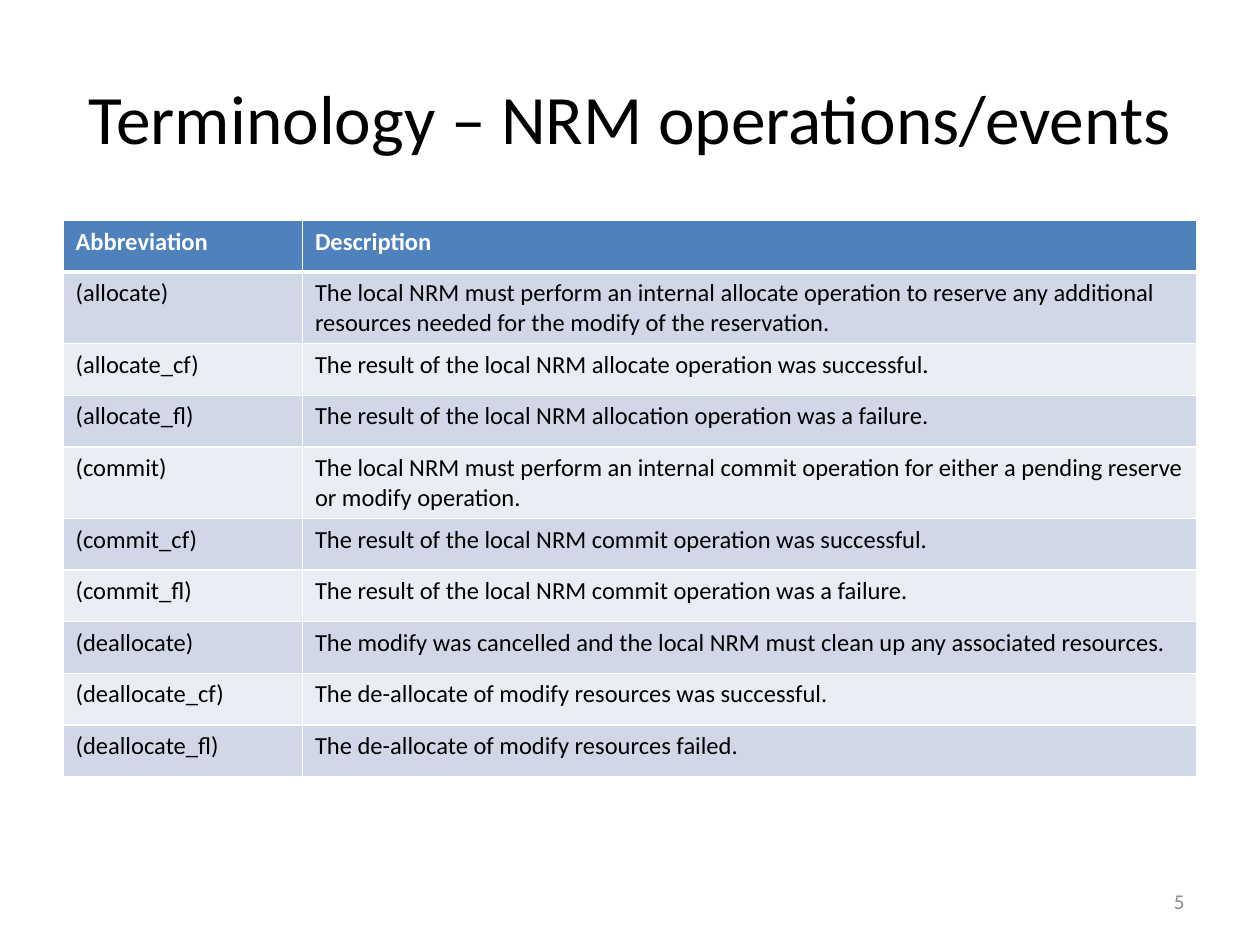
"""Build the slide that lists the NRM operations and events."""

from typing import NamedTuple

from lxml import etree
from pptx import Presentation
from pptx.dml.color import RGBColor
from pptx.enum.text import MSO_ANCHOR, PP_ALIGN
from pptx.oxml.ns import qn
from pptx.util import Inches, Pt

LEFT, CENTER, RIGHT = PP_ALIGN.LEFT, PP_ALIGN.CENTER, PP_ALIGN.RIGHT
MIDDLE = MSO_ANCHOR.MIDDLE

FONT = "Calibri"
BLACK = RGBColor(0x00, 0x00, 0x00)
WHITE = RGBColor(0xFF, 0xFF, 0xFF)
GRAY = RGBColor(0x8C, 0x8C, 0x8C)
HEADER_BLUE = RGBColor(0x4F, 0x81, 0xBD)
BANDS = (RGBColor(0xD0, 0xD8, 0xE8), RGBColor(0xE9, 0xED, 0xF4))

COLUMN_WIDTHS = (1.9, 7.1)
ROW_HEIGHT = 0.41
THIN, THICK = 1, 3


class Term(NamedTuple):
    """One row of the terminology table."""

    abbreviation: str
    description: str


HEADER = Term("Abbreviation", "Description")
TERMS = (
    Term("(allocate)", "The local NRM must perform an internal allocate operation to reserve "
         "any additional resources needed for the modify of the reservation."),
    Term("(allocate_cf)", "The result of the local NRM allocate operation was successful."),
    Term("(allocate_fl)", "The result of the local NRM allocation operation was a failure."),
    Term("(commit)", "The local NRM must perform an internal commit operation for either "
         "a pending reserve or modify operation."),
    Term("(commit_cf)", "The result of the local NRM commit operation was successful."),
    Term("(commit_fl)", "The result of the local NRM commit operation was a failure."),
    Term("(deallocate)", "The modify was cancelled and the local NRM must clean up "
         "any associated resources."),
    Term("(deallocate_cf)", "The de-allocate of modify resources was successful."),
    Term("(deallocate_fl)", "The de-allocate of modify resources failed."),
)


def write_text(frame, text: str, *, size: float, color: RGBColor = BLACK,
               bold: bool = False, align=LEFT) -> None:
    """Put one formatted paragraph into a text frame."""
    para = frame.paragraphs[0]
    para.alignment = align
    span = para.add_run()
    span.text = text
    span.font.name = FONT
    span.font.size = Pt(size)
    span.font.bold = bold
    span.font.color.rgb = color


def add_text_box(page, left: float, top: float, width: float, height: float,
                 text: str, **text_format) -> None:
    """Add a wrapped, vertically centred text box."""
    box = page.shapes.add_textbox(Inches(left), Inches(top), Inches(width), Inches(height))
    box.text_frame.word_wrap = True
    box.text_frame.vertical_anchor = MIDDLE
    write_text(box.text_frame, text, **text_format)


def add_borders(cell, top: float, bottom: float) -> None:
    """Draw white borders of the given point widths around a cell."""
    properties = cell._tc.get_or_add_tcPr()
    for side, width in (("L", THIN), ("R", THIN), ("T", top), ("B", bottom)):
        line = etree.SubElement(properties, qn(f"a:ln{side}"), w=str(Pt(width)))
        fill = etree.SubElement(line, qn("a:solidFill"))
        etree.SubElement(fill, qn("a:srgbClr"), val=str(WHITE))


def add_term_table(page, left: float, top: float) -> None:
    """Add the terminology table with a header and banded rows."""
    rows = (HEADER, *TERMS)
    table = page.shapes.add_table(
        len(rows), len(COLUMN_WIDTHS), Inches(left), Inches(top),
        Inches(sum(COLUMN_WIDTHS)), Inches(ROW_HEIGHT * len(rows))).table
    for column, width in zip(table.columns, COLUMN_WIDTHS):
        column.width = Inches(width)
    for index, term in enumerate(rows):
        is_header = index == 0
        table.rows[index].height = Inches(ROW_HEIGHT)
        for cell, text in zip(table.rows[index].cells, term):
            add_borders(cell, top=THICK if index == 1 else THIN,
                        bottom=THICK if is_header else THIN)
            cell.fill.solid()
            cell.fill.fore_color.rgb = HEADER_BLUE if is_header else BANDS[(index - 1) % 2]
            write_text(cell.text_frame, text, size=14, bold=is_header,
                       color=WHITE if is_header else BLACK)


def main() -> None:
    """Create the deck and save it."""
    deck = Presentation()
    deck.slide_width, deck.slide_height = Inches(10), Inches(7.5)
    page = deck.slides.add_slide(deck.slide_layouts[6])
    add_text_box(page, 0.5, 0.3, 9, 1.25, "Terminology – NRM operations/events",
                 size=39.6, align=CENTER)
    add_term_table(page, 0.5, 1.75)
    add_text_box(page, 7.17, 6.95, 2.33, 0.4, "5", size=12, color=GRAY, align=RIGHT)
    deck.save("out.pptx")


if __name__ == "__main__":
    main()
